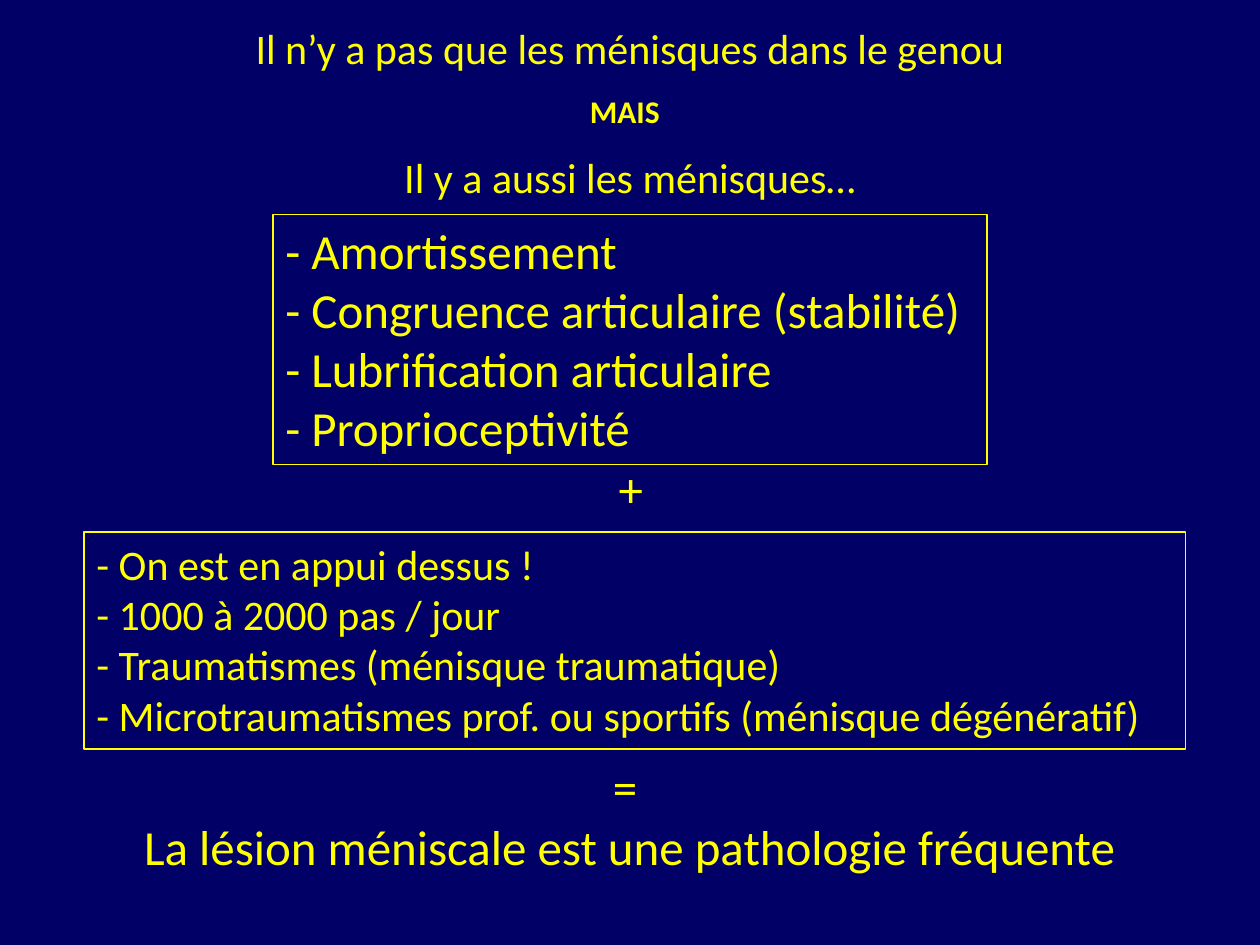
"""Build a slide on why meniscus injuries are common."""
import pptx
import pptx.dml.color
import pptx.enum.shapes
import pptx.enum.text
import pptx.util

Pt = pptx.util.Pt
NAVY = pptx.dml.color.RGBColor(0x00, 0x00, 0x66)
YELLOW = pptx.dml.color.RGBColor(0xFF, 0xFF, 0x00)
FONT = "Calibri"

ROLES = [
    "- Amortissement",
    "- Congruence articulaire (stabilité)",
    "- Lubrification articulaire",
    "- Proprioceptivité",
]
STRESSES = [
    "- On est en appui dessus !",
    "- 1000 à 2000 pas / jour",
    "- Traumatismes (ménisque traumatique)",
    "- Microtraumatismes prof. ou sportifs (ménisque dégénératif)",
]


def write_text(shape, lines, size, alignment, bold=False):
    text_frame = shape.text_frame
    text_frame.word_wrap = True
    text_frame.auto_size = pptx.enum.text.MSO_AUTO_SIZE.SHAPE_TO_FIT_TEXT
    text_frame.vertical_anchor = pptx.enum.text.MSO_ANCHOR.TOP
    text_frame.text = "\n".join(lines)
    for paragraph in text_frame.paragraphs:
        paragraph.alignment = alignment
        for run in paragraph.runs:
            run.font.name = FONT
            run.font.size = Pt(size)
            run.font.bold = bold
            run.font.color.rgb = YELLOW


def add_centred_text(slide, text, left, top, width, height, size, bold=False):
    shape = slide.shapes.add_textbox(Pt(left), Pt(top), Pt(width), Pt(height))
    write_text(shape, [text], size, pptx.enum.text.PP_ALIGN.CENTER, bold)


def add_framed_list(slide, lines, left, top, width, height, size):
    shape = slide.shapes.add_shape(
        pptx.enum.shapes.MSO_SHAPE.RECTANGLE, Pt(left), Pt(top), Pt(width), Pt(height)
    )
    shape.shadow.inherit = False
    shape.fill.background()
    shape.line.color.rgb = YELLOW
    shape.line.width = Pt(0.75)
    write_text(shape, lines, size, pptx.enum.text.PP_ALIGN.LEFT)


def main():
    presentation = pptx.Presentation()
    presentation.slide_width = Pt(720)
    presentation.slide_height = Pt(540)
    slide = presentation.slides.add_slide(presentation.slide_layouts[6])
    slide.background.fill.solid()
    slide.background.fill.fore_color.rgb = NAVY

    add_centred_text(slide, "Il n’y a pas que les ménisques dans le genou", 82, 9.5, 556, 36, 24)
    add_centred_text(slide, "MAIS", 297.5, 49, 119, 29, 18, bold=True)
    add_centred_text(slide, "Il y a aussi les ménisques…", 156, 83, 408, 36, 24)
    add_framed_list(slide, ROLES, 156, 122.5, 408, 143, 28)
    add_centred_text(slide, "+", 332, 258.5, 57, 41, 28)
    add_framed_list(slide, STRESSES, 48, 304, 629.5, 124, 24)
    add_centred_text(slide, "=", 337.5, 428.5, 39.5, 41, 28)
    add_centred_text(
        slide, "La lésion méniscale est une pathologie fréquente", 48, 463, 623.5, 41, 28
    )
    presentation.save("out.pptx")


if __name__ == "__main__":
    main()
